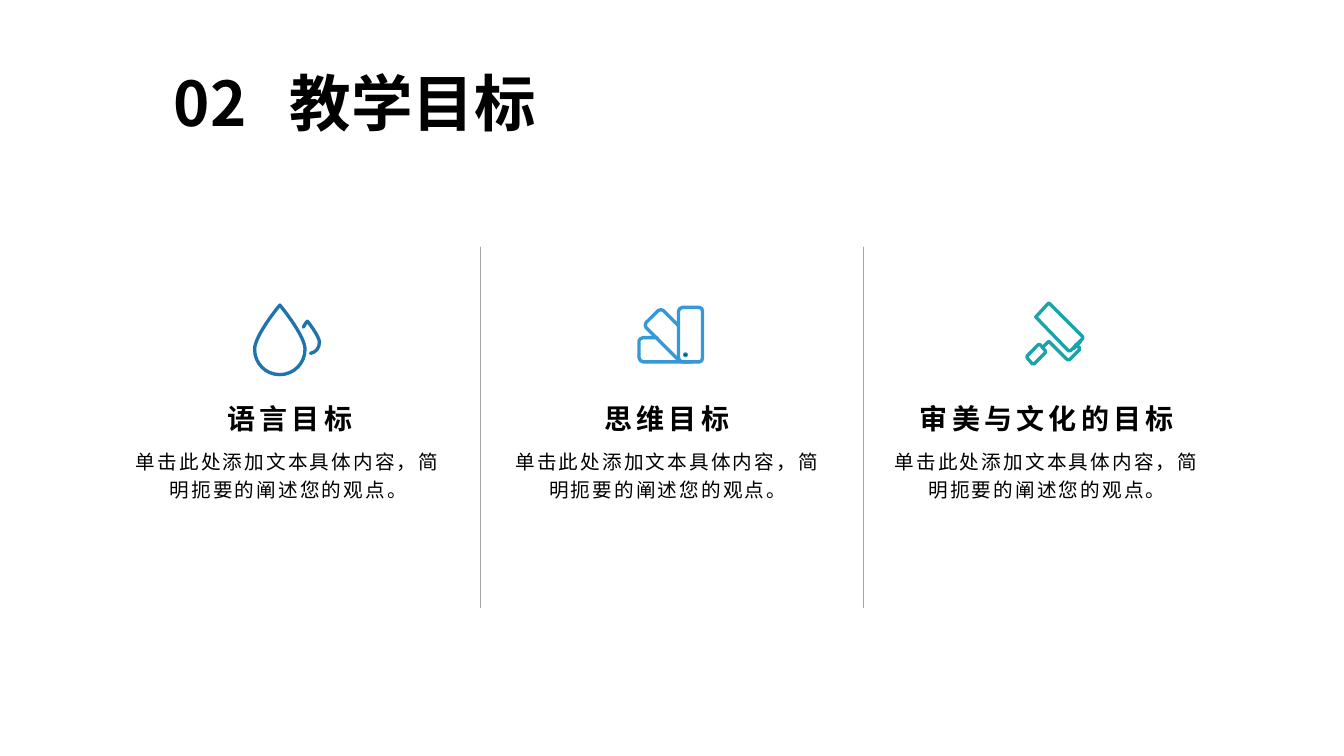
"""Build the teaching goals slide: a title and three columns with line icons."""
from lxml.etree import SubElement
from pptx import Presentation
from pptx.dml.color import RGBColor
from pptx.enum.shapes import MSO_CONNECTOR as CONNECTOR, MSO_SHAPE as SHAPE
from pptx.enum.text import MSO_ANCHOR as ANCHOR, MSO_AUTO_SIZE as AUTO, PP_ALIGN as ALIGN
from pptx.oxml.ns import qn
from pptx.util import Pt

FONT = "Noto Sans CJK SC"
BLUE, SKY, TEAL, GREY, BLACK = "1F74AD", "3498DB", "1AA3AA", "A6A6A6", "000000"
rgb = RGBColor.from_string


def write(box, text, size, bold, spacing, frame_format, paragraph_format, tab=None):
    frame = box.text_frame
    for name, value in frame_format.items():
        setattr(frame, name, value)
    paragraph = frame.paragraphs[0]
    if tab:
        tabs = SubElement(paragraph._p.get_or_add_pPr(), qn("a:tabLst"))
        SubElement(tabs, qn("a:tab"), pos=str(Pt(tab)), algn="l")
    for name, value in paragraph_format.items():
        setattr(paragraph, name, value)
    run = paragraph.add_run()
    run.text = text
    for name, value in {"size": Pt(size), "bold": bold, "name": FONT}.items():
        setattr(run.font, name, value)
    run.font.color.rgb = rgb(BLACK)
    properties = run._r.get_or_add_rPr()
    properties.set("spc", str(int(spacing * 100)))
    SubElement(properties, qn("a:ea"), typeface=FONT)


def stroke(part, color, width):
    part.line.color.rgb = rgb(color)
    part.line.width = Pt(width)
    line = part.line._ln
    line.set("cap", "rnd")
    SubElement(line, qn("a:round"))
    SubElement(part._element.spPr, qn("a:effectLst"))


deck = Presentation()
deck.slide_width, deck.slide_height = Pt(960), Pt(540)
slide = deck.slides.add_slide(deck.slide_layouts[5])
shapes = slide.shapes

title = shapes.title
title_place = {"left": Pt(117), "top": Pt(42.6), "width": Pt(340.6), "height": Pt(60.5)}
for name, value in title_place.items():
    setattr(title, name, value)
write(title, "02\t教学目标", 44, True, 0,
      {"word_wrap": True, "vertical_anchor": ANCHOR.TOP, "auto_size": AUTO.SHAPE_TO_FIT_TEXT},
      {"alignment": ALIGN.LEFT}, tab=82.6)

rules = [
    (343, 176.4, 343, 434.2, GREY, 0.5),
    (617, 176.4, 617, 434.2, GREY, 0.5),
    (771.8, 244.1, 766.8, 249.1, TEAL, 2.38),
]
for x1, y1, x2, y2, color, width in rules:
    rule = shapes.add_connector(CONNECTOR.STRAIGHT, Pt(x1), Pt(y1), Pt(x2), Pt(y2))
    stroke(rule, color, width)

large_drop = [
    (217.9, 249.5), (217.9, 259.6, 209.8, 267.6, 199.9, 267.6),
    (189.8, 267.6, 181.9, 259.6, 181.9, 249.5),
    (181.9, 239.5, 199.9, 217.9, 199.9, 217.9),
    (199.9, 217.9, 217.9, 239.5, 217.9, 249.5)]
small_drop = [
    (216.7, 233.7), (218.2, 230.8, 219.6, 229.4, 219.6, 229.4),
    (219.6, 229.4, 228.2, 240.2, 228.2, 244.5),
    (228.2, 248.8, 225.4, 251.7, 221.8, 252.4)]
roller = [
    (764.6, 250.6), (763.2, 250.6), (740.2, 226.8), (739.8, 226.4), (740.2, 226.1),
    (748.8, 216.7), (749.5, 216.7), (773.3, 240.5), (773.3, 241.9)]
roller_arm = [
    (768.2, 246.2), (771.1, 248.4), (771.1, 249.8), (763.9, 257), (762.5, 257),
    (749.5, 244.1), (748.8, 244.1), (744.5, 248.4)]
roller_grip = [
    (738.7, 259.9), (737.3, 259.9), (733.7, 255.6), (733.7, 254.2),
    (741.6, 246.2), (743, 246.2), (746.6, 250.6), (746.6, 252)]
flat_swatch = [
    (469.4, 241.2), (459.4, 241.2), (457.9, 241.2, 456.5, 242.6, 456.5, 243.4),
    (456.5, 255.6), (456.5, 257, 457.9, 258.5, 459.4, 258.5), (493.9, 258.5)]
tilted_swatch = [
    (484.6, 232.6), (473.8, 221.8), (473, 221, 471.6, 221, 470.2, 221.8),
    (461.5, 230.4), (460.8, 231.1, 460.8, 233.3, 461.5, 234), (485.3, 257.8)]
upright_swatch = [
    (499.7, 258.5), (501.1, 258.5, 501.8, 257, 501.8, 255.6),
    (501.8, 222.5), (501.8, 221, 501.1, 219.6, 499.7, 219.6),
    (487.4, 219.6), (486, 219.6, 484.6, 221, 484.6, 222.5),
    (484.6, 255.6), (484.6, 257, 486, 258.5, 487.4, 258.5)]

outlines = [
    (large_drop, BLUE, True), (small_drop, BLUE, False),
    (roller, TEAL, True), (roller_arm, TEAL, False), (roller_grip, TEAL, True),
    (flat_swatch, SKY, False), (tilted_swatch, SKY, False), (upright_swatch, SKY, True),
]
for steps, color, closed in outlines:
    corners = [(Pt(step[-2]), Pt(step[-1])) for step in steps]
    builder = shapes.build_freeform(*corners[0])
    builder.add_line_segments(corners[1:], close=closed)
    outline = builder.convert_to_shape()
    segments = list(outline._element.iter(qn("a:lnTo")))
    for segment, step in zip(segments, steps[1:]):
        if len(step) == 6:
            curve = SubElement(segment.getparent(), qn("a:cubicBezTo"))
            for x, y in zip(step[::2], step[1::2]):
                SubElement(curve, qn("a:pt"), x=str(Pt(x) - outline.left),
                           y=str(Pt(y) - outline.top))
            segment.getparent().replace(segment, curve)
    outline.fill.background()
    stroke(outline, color, 2.38)

rivet = shapes.add_shape(SHAPE.OVAL, Pt(488.2), Pt(252), Pt(2.9), Pt(2.9))
rivet.fill.solid()
rivet.fill.fore_color.rgb = rgb("03595D")
stroke(rivet, SKY, 0.75)

centred = {"alignment": ALIGN.CENTER, "line_spacing": 1.2}
goals = [("语言目标", 84), ("思维目标", 353.2), ("审美与文化的目标", 624.7)]
for column, (goal, heading_left) in enumerate(goals):
    detail = shapes.add_textbox(Pt(82.8 + 271 * column), Pt(314.2), Pt(246.2), Pt(103.7))
    write(detail, "单击此处添加文本具体内容，简明扼要的阐述您的观点。", 14, False, 1.5,
          {"word_wrap": True}, centred)
    heading = shapes.add_textbox(Pt(heading_left), Pt(280.1), Pt(246.2), Pt(33.1))
    write(heading, goal, 20, True, 3,
          {"word_wrap": False, "vertical_anchor": ANCHOR.MIDDLE}, centred)

deck.save("out.pptx")
